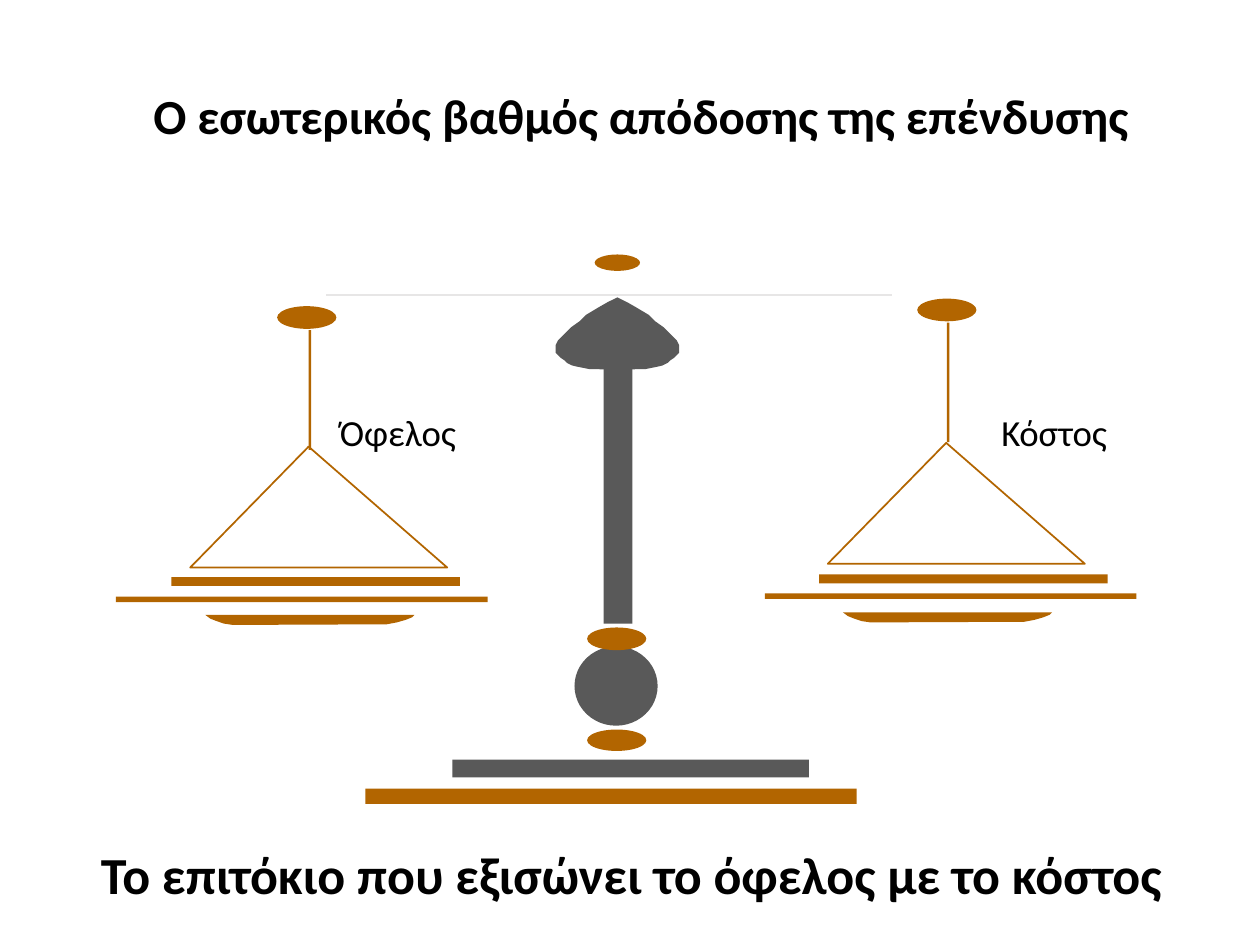
from dataclasses import dataclass

from lxml.etree import SubElement
from pptx import Presentation
from pptx.dml.color import RGBColor
from pptx.enum.shapes import MSO_CONNECTOR as Connector
from pptx.enum.shapes import MSO_SHAPE as Shape
from pptx.enum.text import MSO_ANCHOR as Anchor
from pptx.enum.text import PP_ALIGN as Align
from pptx.oxml.ns import qn
from pptx.util import Inches, Pt


@dataclass(frozen=True)
class Theme:
    font: str = "Calibri"
    text: str = "000000"
    bronze: str = "B26500"
    steel: str = "595959"
    beam: str = "E7E6E6"
    title_size: float = 28
    label_size: float = 21
    footer_size: float = 29.7
    line_width: float = 1


THEME = Theme()

# All positions are columns and rows of a 100 x 75 grid of square cells.
COLUMNS, ROWS = 100, 75
CELL = Inches(10) // COLUMNS

# text, box (left, top, width, height), size, bold, alignment, line spacing
TEXTS = [
    ("Ο εσωτερικός βαθμός απόδοσης της επένδυσης",
     (6.7, 6.8, 88.3, 5.2), THEME.title_size, True, Align.CENTER, 0.9),
    ("Όφελος", (26, 32.5, 13, 4), THEME.label_size, False, Align.LEFT, 0.9),
    ("Κόστος", (78.5, 32.5, 13, 4), THEME.label_size, False, Align.LEFT, 0.9),
    ("Το επιτόκιο που εξισώνει το όφελος με το κόστος",
     (6, 67.2, 88.3, 5.2), THEME.footer_size, True, Align.CENTER, 0.8),
]

BEAM = ((25.9, 23.4), (70.8, 23.4))

# Stand parts from back to front: preset, box, colour
STAND = [
    (Shape.RECTANGLE, (47.9, 28.6, 2.3, 20.9), THEME.steel),
    (Shape.OVAL, (47.2, 20.2, 3.6, 1.3), THEME.bronze),
    (Shape.OVAL, (45.6, 51.3, 6.6, 6.3), THEME.steel),
    (Shape.OVAL, (46.6, 57.9, 4.7, 1.7), THEME.bronze),
    (Shape.OVAL, (46.6, 49.8, 4.7, 1.8), THEME.bronze),
    (Shape.RECTANGLE, (35.9, 60.3, 28.3, 1.4), THEME.steel),
    (Shape.RECTANGLE, (29, 62.6, 39, 1.2), THEME.bronze),
]

# Right half of the cap, as offsets from its apex
CAP_APEX = (49, 23.6)
CAP_HALF = [
    (0, 0), (0.8, 0.4), (1.5, 0.8), (2, 1.1), (2.5, 1.4), (3, 1.9),
    (3.7, 2.4), (4.2, 2.9), (4.7, 3.4), (4.9, 3.8), (4.9, 4.2), (4.9, 4.4),
    (4.7, 4.6), (4.5, 4.8), (4.2, 5), (4, 5.2), (3.6, 5.4), (3.2, 5.5),
    (2.7, 5.6), (2.2, 5.7), (1.6, 5.7), (0, 5.75),
]

# Top left corner of every part of a scale
SCALES = [
    dict(bead=(22, 24.3), rod=(24.5, 26.2), hanger=(15.1, 35.45),
         plate=(13.6, 45.8), tray=(9.2, 47.35), bowl=(16.3, 48.8)),
    dict(bead=(72.8, 23.7), rod=(75.15, 25.6), hanger=(65.7, 35.15),
         plate=(65, 45.6), tray=(60.7, 47.1), bowl=(66.9, 48.6)),
]
# Scale parts that are presets: preset, width, height
SCALE_PARTS = {
    "bead": (Shape.OVAL, 4.7, 1.8),
    "rod": (Shape.RECTANGLE, 0.2, 9.5),
    "tray": (Shape.RECTANGLE, 29.5, 0.45),
    "plate": (Shape.RECTANGLE, 22.9, 0.7),
}
HANGER = [(9.4, 0), (20.4, 9.6), (0, 9.6)]
BOWL = [(0, 0), (16.6, 0), (16.4, 0.2), (15.9, 0.4), (15.2, 0.6), (14.4, 0.75),
        (2.2, 0.8), (1.5, 0.7), (0.9, 0.5), (0.4, 0.3)]


def cells(values):
    return [round(value * CELL) for value in values]


def paint(shape, color):
    shape.shadow.inherit = False
    shape.fill.solid()
    shape.fill.fore_color.rgb = RGBColor.from_string(color)
    shape.line.fill.background()


def add_preset(slide, preset, box, color):
    paint(slide.shapes.add_shape(preset, *cells(box)), color)


def add_polygon(slide, origin, offsets):
    """Draw a closed outline through points given as offsets from origin."""
    points = [cells((origin[0] + x, origin[1] + y)) for x, y in offsets]
    builder = slide.shapes.build_freeform(*points[0])
    builder.add_line_segments(points[1:], close=True)
    return builder.convert_to_shape()


def add_text(slide, text, box, size, bold, alignment, spacing):
    text_frame = slide.shapes.add_textbox(*cells(box)).text_frame
    text_frame.text = text
    text_frame.word_wrap = True
    text_frame.vertical_anchor = Anchor.MIDDLE
    paragraph = text_frame.paragraphs[0]
    paragraph.alignment = alignment
    paragraph.line_spacing = spacing
    font = paragraph.runs[0].font
    font.name, font.size, font.bold = THEME.font, Pt(size), bold
    font.color.rgb = RGBColor.from_string(THEME.text)


def add_scale(slide, corners):
    hanger = add_polygon(slide, corners["hanger"], HANGER)
    hanger.shadow.inherit = False
    hanger.fill.background()
    hanger.line.color.rgb = RGBColor.from_string(THEME.bronze)
    hanger.line.width = Pt(THEME.line_width)
    for part, (preset, width, height) in SCALE_PARTS.items():
        add_preset(slide, preset, (*corners[part], width, height), THEME.bronze)
    paint(add_polygon(slide, corners["bowl"], BOWL), THEME.bronze)


def add_beam(slide):
    start, end = BEAM
    beam = slide.shapes.add_connector(
        Connector.STRAIGHT, *cells(start), *cells(end))
    beam.line.color.rgb = RGBColor.from_string(THEME.beam)
    beam.line.width = Pt(THEME.line_width)
    SubElement(beam._element.spPr, qn("a:effectLst"))


def main():
    presentation = Presentation()
    presentation.slide_width = COLUMNS * CELL
    presentation.slide_height = ROWS * CELL
    slide = presentation.slides.add_slide(presentation.slide_layouts[6])

    for preset, box, color in STAND:
        add_preset(slide, preset, box, color)
    mirrored = [(-x, y) for x, y in reversed(CAP_HALF[1:-1])]
    paint(add_polygon(slide, CAP_APEX, CAP_HALF + mirrored), THEME.steel)
    for corners in SCALES:
        add_scale(slide, corners)
    add_beam(slide)
    for entry in TEXTS:
        add_text(slide, *entry)

    presentation.save("out.pptx")


if __name__ == "__main__":
    main()
